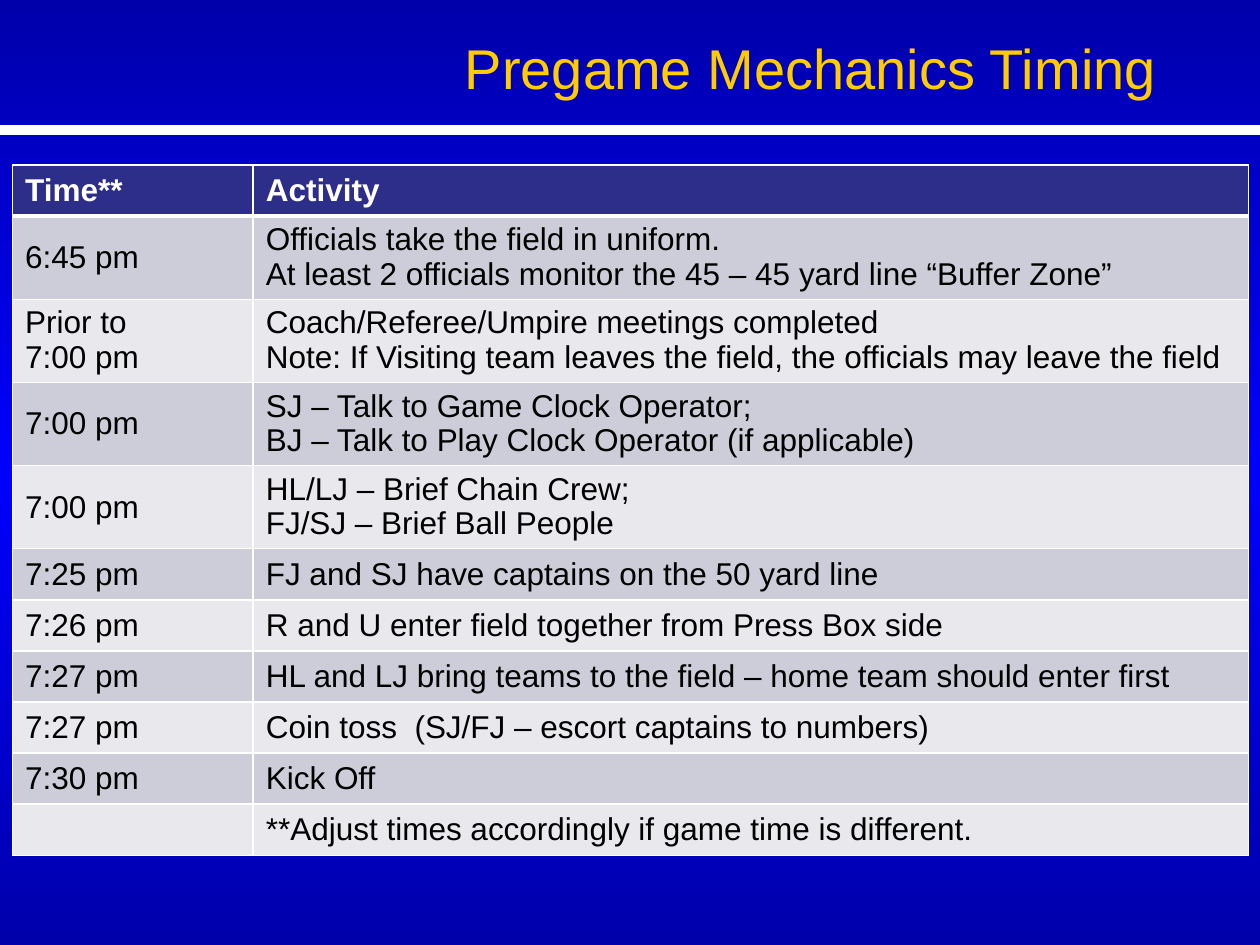
"""Build the pregame mechanics timing slide."""
from pptx import Presentation
from pptx.dml.color import RGBColor
from pptx.enum.shapes import MSO_CONNECTOR
from pptx.enum.text import MSO_ANCHOR, PP_ALIGN
from pptx.oxml import parse_xml
from pptx.oxml.ns import nsdecls, qn
from pptx.util import Inches, Pt

STRAIGHT = MSO_CONNECTOR.STRAIGHT
MIDDLE = MSO_ANCHOR.MIDDLE
LEFT, CENTER = PP_ALIGN.LEFT, PP_ALIGN.CENTER
FONT = "Arial"
COLORS = {
    "edge": "0000AA", "glow": "0000FF", "title": "FFCC00", "white": "FFFFFF",
    "black": "000000", "header": "2D2D8A", "dark": "CDCDDA", "light": "E8E8ED",
}
SCHEDULE = [
    ("Time**", "Activity"),
    ("6:45 pm", "Officials take the field in uniform.\n"
                "At least 2 officials monitor the 45 – 45 yard line “Buffer Zone”"),
    ("Prior to\n7:00 pm", "Coach/Referee/Umpire meetings completed\n"
     "Note: If Visiting team leaves the field, the officials may leave the field"),
    ("7:00 pm", "SJ – Talk to Game Clock Operator;\n"
                "BJ – Talk to Play Clock Operator (if applicable)"),
    ("7:00 pm", "HL/LJ – Brief Chain Crew;\nFJ/SJ – Brief Ball People"),
    ("7:25 pm", "FJ and SJ have captains on the 50 yard line"),
    ("7:26 pm", "R and U enter field together from Press Box side"),
    ("7:27 pm", "HL and LJ bring teams to the field – home team should enter first"),
    ("7:27 pm", "Coin toss  (SJ/FJ – escort captains to numbers)"),
    ("7:30 pm", "Kick Off"),
    ("", "**Adjust times accordingly if game time is different."),
]
COLUMN_WIDTHS = (1.91, 7.9)
SINGLE_ROW, DOUBLE_ROW = Inches(7.3 / 18), Inches(0.66)


def color(name):
    """Return a named color."""
    return RGBColor.from_string(COLORS[name])


def set_background(slide):
    """Fill the slide with a vertical gradient, brightest in the middle."""
    stops = "".join(
        f'<a:gs pos="{position}"><a:srgbClr val="{COLORS[name]}"/></a:gs>'
        for position, name in ((0, "edge"), (50000, "glow"), (100000, "edge")))
    background = parse_xml(
        f'<p:bg {nsdecls("p", "a")}><p:bgPr><a:gradFill rotWithShape="1">'
        f'<a:gsLst>{stops}</a:gsLst><a:lin ang="5400000" scaled="0"/>'
        '</a:gradFill><a:effectLst/></p:bgPr></p:bg>')
    slide.element.find(qn("p:cSld")).insert(0, background)


def add_rule(slide):
    """Draw the white line under the title."""
    rule = slide.shapes.add_connector(
        STRAIGHT, Inches(0), Inches(1.03), Inches(10), Inches(1.03))
    rule.line.color.rgb = color("white")
    rule.line.width = Pt(6)
    rule.element.spPr.append(parse_xml(f'<a:effectLst {nsdecls("a")}/>'))


def write(para, text, size, name, bold=False, align=LEFT):
    """Add text to a paragraph, one run per line."""
    para.alignment = align
    para.font.size = Pt(size)
    for number, line in enumerate(text.split("\n")):
        if number:
            para.add_line_break()
        span = para.add_run()
        span.text = line
        span.font.name = FONT
        span.font.size = Pt(size)
        span.font.bold = bold
        span.font.color.rgb = color(name)


def add_title(slide):
    """Add the slide title."""
    box = slide.shapes.add_textbox(Inches(3), Inches(0.22), Inches(6.87), Inches(0.64))
    box.text_frame.word_wrap = True
    write(box.text_frame.paragraphs[0], "Pregame Mechanics Timing", 32, "title",
          align=CENTER)


def set_borders(cell, top, bottom):
    """Draw white cell borders with the given top and bottom widths in points."""
    properties = cell._tc.get_or_add_tcPr()
    for side, width in (("L", 1), ("R", 1), ("T", top), ("B", bottom)):
        properties.append(parse_xml(
            f'<a:ln{side} {nsdecls("a")} w="{Pt(width)}"><a:solidFill>'
            f'<a:srgbClr val="{COLORS["white"]}"/></a:solidFill></a:ln{side}>'))


def fill_cell(cell, text, row_number):
    """Style one cell by its row and write its text."""
    header = row_number == 0
    set_borders(cell, 3 if row_number == 1 else 1, 3 if header else 1)
    cell.fill.solid()
    band = "dark" if row_number % 2 else "light"
    cell.fill.fore_color.rgb = color("header" if header else band)
    cell.vertical_anchor = MIDDLE
    para = cell.text_frame.paragraphs[0]
    if "\n" in text:
        para.line_spacing = 0.97
    if text:
        write(para, text, 18, "white" if header else "black", bold=header)


def add_schedule(slide):
    """Add the timing table."""
    heights = [DOUBLE_ROW if "\n" in activity else SINGLE_ROW
               for _, activity in SCHEDULE]
    table = slide.shapes.add_table(
        len(SCHEDULE), len(COLUMN_WIDTHS), Inches(0.1), Inches(1.31),
        Inches(sum(COLUMN_WIDTHS)), sum(heights)).table
    for column, width in zip(table.columns, COLUMN_WIDTHS):
        column.width = Inches(width)
    for row_number, (row, texts) in enumerate(zip(table.rows, SCHEDULE)):
        row.height = heights[row_number]
        for cell, text in zip(row.cells, texts):
            fill_cell(cell, text, row_number)


def main():
    """Build and save the deck."""
    deck = Presentation()
    deck.slide_width, deck.slide_height = Inches(10), Inches(7.5)
    slide = deck.slides.add_slide(deck.slide_layouts[6])
    set_background(slide)
    add_rule(slide)
    add_schedule(slide)
    add_title(slide)
    deck.save("out.pptx")


if __name__ == "__main__":
    main()
